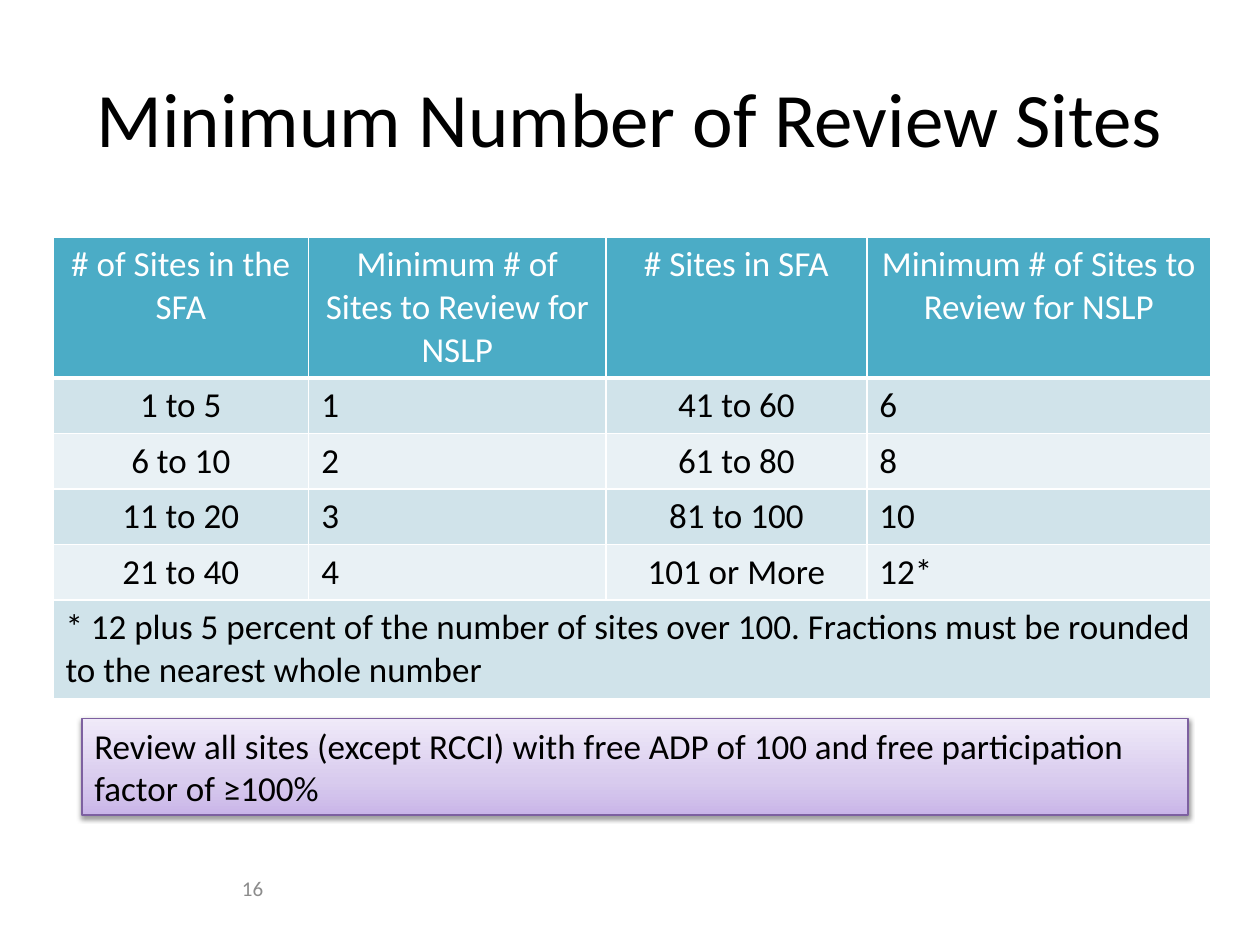
from copy import deepcopy
from lxml import etree
from pptx import Presentation
from pptx.dml.color import RGBColor as RGB
from pptx.enum.shapes import MSO_SHAPE as SHAPE
from pptx.enum.text import MSO_ANCHOR as ANCHOR, PP_ALIGN as ALIGN
from pptx.oxml import parse_xml
from pptx.oxml.ns import qn
from pptx.util import Inches, Pt

BLACK = RGB(0x00, 0x00, 0x00)
WHITE = RGB(0xFF, 0xFF, 0xFF)
GRAY = RGB(0x8C, 0x8C, 0x8C)
TEAL = RGB(0x4B, 0xAC, 0xC6)
BLUE = RGB(0xD0, 0xE3, 0xEA)
PALE = RGB(0xE9, 0xF1, 0xF5)
LILAC = RGB(0xC9, 0xB5, 0xE8)
MAUVE = RGB(0xD8, 0xCB, 0xEE)
MIST = RGB(0xF0, 0xEA, 0xF9)
PURPLE = RGB(0x7D, 0x60, 0xA0)
NS = "http://schemas.openxmlformats.org/drawingml/2006/main"


def write(frame, text, size, color, align):
    frame.text = text
    frame.word_wrap = True
    para = frame.paragraphs[0]
    para.alignment = align
    font = para.runs[0].font
    font.name, font.size, font.bold = "Calibri", Pt(size), False
    font.color.rgb = color


def edge(cell, row):
    props = cell._tc.get_or_add_tcPr()
    for i, side in enumerate(("lnL", "lnR", "lnT", "lnB")):
        thick = (row == 0 and side == "lnB") or (row == 1 and side == "lnT")
        line = etree.Element(qn(f"a:{side}"), w=str(Pt(3 if thick else 1)))
        fill = etree.SubElement(line, qn("a:solidFill"))
        etree.SubElement(fill, qn("a:srgbClr"), val=str(WHITE))
        props.insert(i, line)


prs = Presentation()
prs.slide_width, prs.slide_height = Inches(10), Inches(7.5)
slide = prs.slides.add_slide(prs.slide_layouts[5])

title = slide.shapes.title
title.left, title.top = Inches(0.5), Inches(0.3)
title.width, title.height = Inches(9), Inches(1.25)
write(title.text_frame, "Minimum Number of Review Sites", 44, BLACK, ALIGN.CENTER)
title.text_frame.vertical_anchor = ANCHOR.MIDDLE

rows = [
    ["# of Sites in the SFA", "Minimum # of Sites to Review for NSLP",
     "# Sites in SFA", "Minimum # of Sites to Review for NSLP"],
    ["1 to 5", "1", "41 to 60", "6"],
    ["6 to 10", "2", "61 to 80", "8"],
    ["11 to 20", "3", "81 to 100", "10"],
    ["21 to 40", "4", "101 or More", "12*"],
    ["* 12 plus 5 percent of the number of sites over 100. "
     "Fractions must be rounded to the nearest whole number"],
]
widths = [2.03, 2.36, 2.07, 2.73]
heights = [1.1] + [0.44] * 4 + [0.76]
table = slide.shapes.add_table(
    len(rows), len(widths), Inches(0.42), Inches(1.88),
    Inches(sum(widths)), Inches(sum(heights))).table
for col, width in zip(table.columns, widths):
    col.width = Inches(width)
for row, height in zip(table.rows, heights):
    row.height = Inches(height)
last = len(rows) - 1
table.cell(last, 0).merge(table.cell(last, len(widths) - 1))
for r, texts in enumerate(rows):
    for c in range(len(widths)):
        cell = table.cell(r, c)
        cell.fill.solid()
        cell.fill.fore_color.rgb = TEAL if r == 0 else BLUE if r % 2 else PALE
        edge(cell, r)
        if c < len(texts):
            mid = r == 0 or (r < last and c % 2 == 0)
            write(cell.text_frame, texts[c], 20, BLACK if r else WHITE,
                  ALIGN.CENTER if mid else ALIGN.LEFT)

page = slide.shapes.add_textbox(Inches(0.42), Inches(6.85), Inches(3.17), Inches(0.4))
write(page.text_frame, "16", 12, GRAY, ALIGN.CENTER)
page.text_frame.vertical_anchor = ANCHOR.MIDDLE

note = slide.shapes.add_shape(
    SHAPE.RECTANGLE, Inches(0.65), Inches(5.7), Inches(8.78), Inches(0.77))
write(note.text_frame, "Review all sites (except RCCI) with free ADP of 100 "
      "and free participation factor of ≥100%", 20, BLACK, ALIGN.LEFT)
note.text_frame.vertical_anchor = ANCHOR.TOP
note.line.color.rgb = PURPLE
note.line.width = Pt(0.75)
note.fill.gradient()
note.fill.gradient_angle = 90
props = note._element.spPr
stops = props.find(qn("a:gradFill")).find(qn("a:gsLst"))
stops.insert(1, deepcopy(stops[0]))
shades = [(0, LILAC), (0.35, MAUVE), (1, MIST)]
for stop, (place, color) in zip(note.fill.gradient_stops, shades):
    stop.position = place
    stop.color.rgb = color
note.shadow.inherit = False
props.find(qn("a:effectLst")).append(parse_xml(
    f'<a:outerShdw xmlns:a="{NS}" blurRad="{Pt(3.1)}" dist="{Pt(1.6)}" '
    'dir="5400000" rotWithShape="0"><a:srgbClr val="000000">'
    '<a:alpha val="38000"/></a:srgbClr></a:outerShdw>'))

prs.save("out.pptx")
